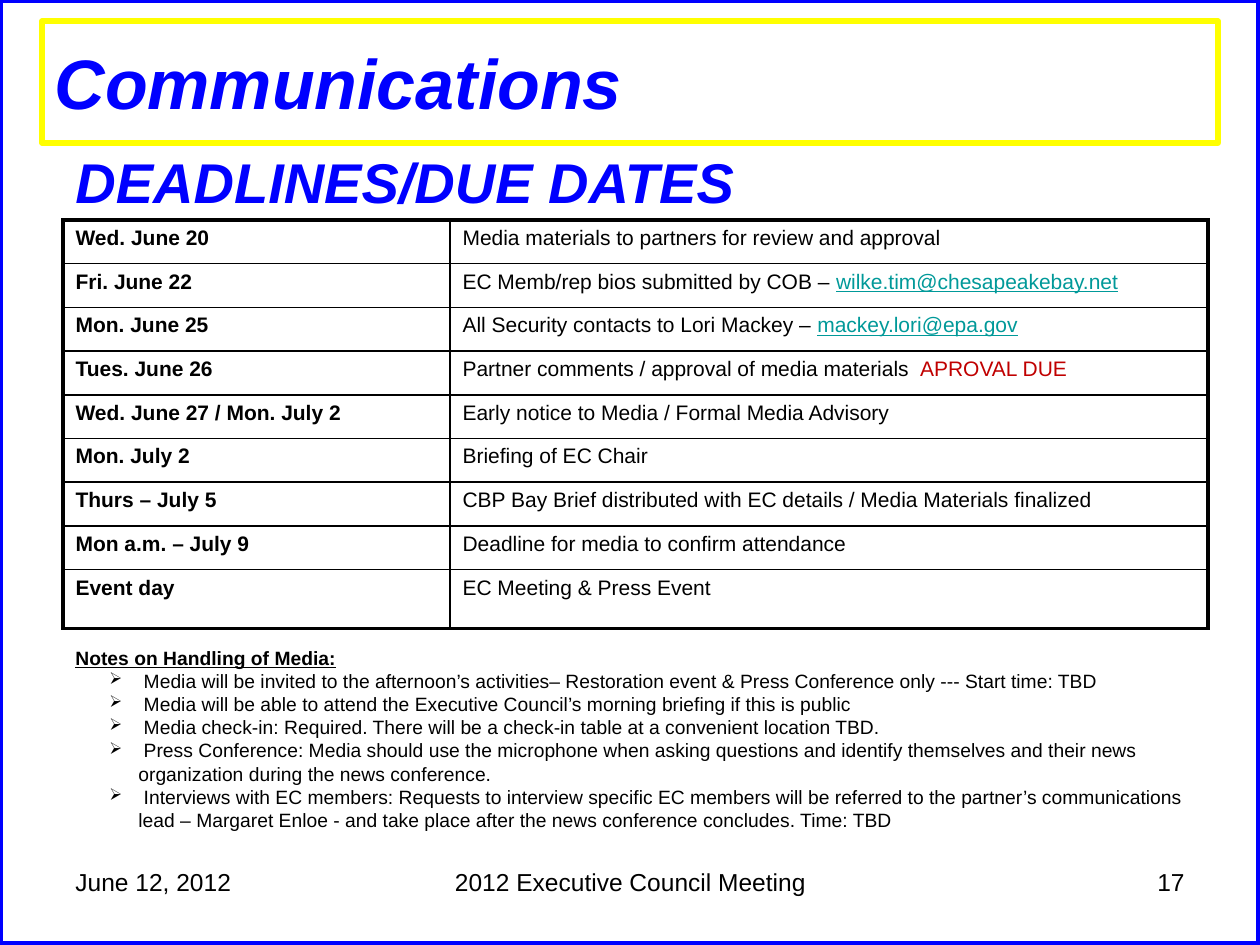
from pptx import Presentation
from pptx.dml.color import RGBColor
from pptx.enum.shapes import MSO_SHAPE as Shape
from pptx.enum.text import MSO_ANCHOR as Anchor, PP_ALIGN as Align
from pptx.oxml.ns import qn
from pptx.util import Pt
from lxml.etree import SubElement

PX = 914400 / 126
FONT = "Arial"
COLORS = {"blue": "0000FF", "yellow": "FFFF00", "black": "000000", "link": "009999", "red": "C00000"}
DEADLINES = [
    ("Wed. June 20", [("Media materials to partners for review and approval", "black")]),
    ("Fri. June 22", [("EC Memb/rep bios submitted by COB – ", "black"), ("wilke.tim@chesapeakebay.net", "link")]),
    ("Mon. June 25", [("All Security contacts to Lori Mackey – ", "black"), ("mackey.lori@epa.gov", "link")]),
    ("Tues. June 26", [("Partner comments / approval of media materials ", "black"), (" APROVAL DUE", "red")]),
    ("Wed. June 27 / Mon. July 2", [("Early notice to Media / Formal Media Advisory", "black")]),
    ("Mon. July 2", [("Briefing of EC Chair", "black")]),
    ("Thurs – July 5", [("CBP Bay Brief distributed with EC details / Media Materials finalized", "black")]),
    ("Mon a.m. – July 9", [("Deadline for media to confirm attendance", "black")]),
    ("Event day", [("EC Meeting & Press Event", "black")]),
]
NOTES = [
    "Media will be invited to the afternoon’s activities– Restoration event & Press Conference only --- Start time: TBD",
    "Media will be able to attend the Executive Council’s morning briefing if this is public",
    "Media check-in: Required. There will be a check-in table at a convenient location TBD.",
    "Press Conference: Media should use the microphone when asking questions and identify themselves "
    "and their news organization during the news conference.",
    "Interviews with EC members: Requests to interview specific EC members will be referred to the partner’s "
    "communications lead – Margaret Enloe - and take place after the news conference concludes. Time: TBD",
]
FOOTERS = [
    (63, 294, "June 12, 2012", Align.LEFT),
    (431, 399, "2012 Executive Council Meeting", Align.CENTER),
    (903, 294, "17", Align.RIGHT),
]


def px(value):
    return round(value * PX)


def rgb(name):
    return RGBColor.from_string(COLORS[name])


def set_font(font, size, color="black", bold=False, italic=False):
    font.name, font.size, font.bold, font.italic = FONT, Pt(size), bold, italic
    font.color.rgb = rgb(color)


def set_outline(shape, color, width):
    shape.fill.background()
    shape.line.color.rgb = rgb(color)
    shape.line.width = Pt(width)


def add_title(slide, text):
    title = slide.shapes.title
    title.left, title.top, title.width, title.height = px(42), px(21), px(1176), px(122)
    set_outline(title, "yellow", 3)
    title.text_frame.text = text
    title.text_frame.vertical_anchor = Anchor.MIDDLE
    paragraph = title.text_frame.paragraphs[0]
    paragraph.alignment = Align.LEFT
    set_font(paragraph.font, 40, "blue", bold=True, italic=True)


def add_frame(slide, width, height):
    frame = slide.shapes.add_shape(Shape.RECTANGLE, 0, 0, width, height)
    frame.shadow.inherit = False
    set_outline(frame, "blue", 4)


def add_text(slide, box, text, size, align=Align.LEFT, **style):
    text_frame = slide.shapes.add_textbox(*map(px, box)).text_frame
    text_frame.word_wrap = True
    text_frame.text = text
    paragraph = text_frame.paragraphs[0]
    paragraph.alignment = align
    set_font(paragraph.font, size, **style)
    return text_frame


def set_borders(cell, widths):
    properties = cell._tc.get_or_add_tcPr()
    for side, width in widths.items():
        line = SubElement(properties, qn(f"a:ln{side}"), w=str(Pt(width)))
        fill = SubElement(line, qn("a:solidFill"))
        SubElement(fill, qn("a:srgbClr"), val=COLORS["black"])


def fill_cell(cell, runs, bold):
    paragraph = cell.text_frame.paragraphs[0]
    set_font(paragraph.font, 12, bold=bold)
    for text, color in runs:
        run = paragraph.add_run()
        run.text = text
        set_font(run.font, 12, color, bold)
        run.font.underline = color == "link"


def add_deadlines(slide):
    last = len(DEADLINES) - 1
    shape = slide.shapes.add_table(last + 1, 2, px(63), px(220), px(1145), px(409))
    table = shape.table
    table.first_row = table.horz_banding = False
    for column, width in zip(table.columns, (387, 758)):
        column.width = px(width)
    for index, (date, task) in enumerate(DEADLINES):
        table.rows[index].height = px(59) if index == last else px(350) // last
        for column, runs in enumerate(([(date, "black")], task)):
            cell = table.cell(index, column)
            set_borders(cell, {
                "L": 1 if column else 2.25,
                "R": 2.25 if column else 1,
                "T": 1 if index else 2.25,
                "B": 2.25 if index == last else 1,
            })
            cell.fill.background()
            fill_cell(cell, runs, bold=column == 0)


def add_bullet(paragraph):
    properties = paragraph._p.get_or_add_pPr()
    properties.set("marL", str(px(63)))
    properties.set("indent", str(px(-29)))
    SubElement(properties, qn("a:buSzPct"), val="85000")
    SubElement(properties, qn("a:buChar"), char="➢")


def add_notes(slide):
    text_frame = add_text(slide, (63, 640, 1166, 199), "Notes on Handling of Media:", 11, bold=True)
    text_frame.paragraphs[0].font.underline = True
    for note in NOTES:
        paragraph = text_frame.add_paragraph()
        paragraph.text = f" {note}"
        set_font(paragraph.font, 11)
        add_bullet(paragraph)


def main():
    presentation = Presentation()
    presentation.slide_width, presentation.slide_height = px(1260), px(945)
    slide = presentation.slides.add_slide(presentation.slide_layouts[5])
    add_title(slide, "Communications")
    add_frame(slide, presentation.slide_width, presentation.slide_height)
    add_text(slide, (63, 141, 1176, 79), "DEADLINES/DUE DATES", 32, color="blue", bold=True, italic=True)
    add_deadlines(slide)
    for left, width, text, align in FOOTERS:
        add_text(slide, (left, 861, width, 66), text, 14, align)
    add_notes(slide)
    presentation.save("out.pptx")


if __name__ == "__main__":
    main()
